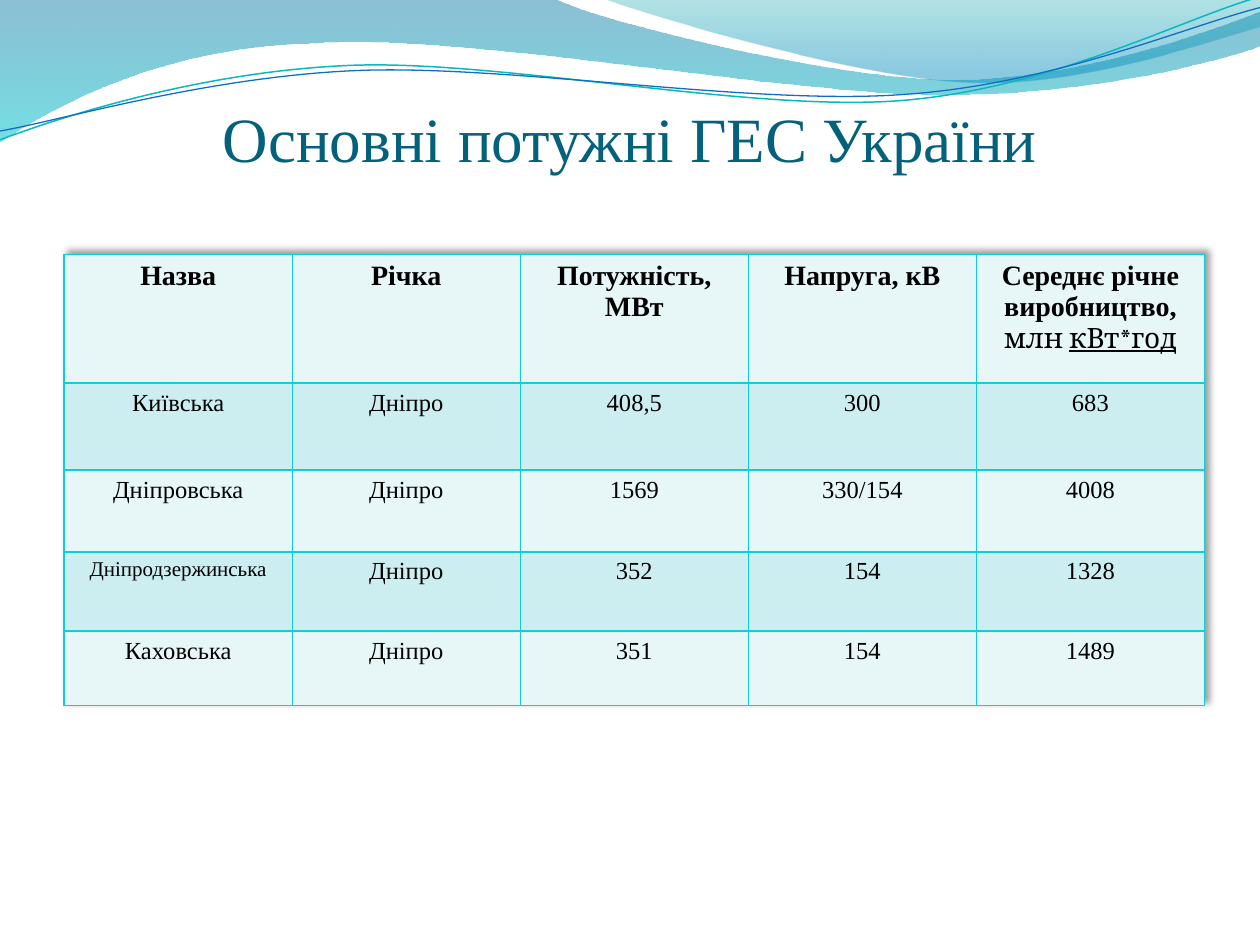
import math
from dataclasses import dataclass

from lxml import etree
from pptx import Presentation
from pptx import util as u
from pptx.dml import color
from pptx.enum import text
from pptx.oxml import ns


@dataclass(frozen=True)
class Theme:
    font: str = "Times New Roman"
    unit_font: str = "Cambria"
    title: str = "04617B"
    ink: str = "000000"
    border: str = "0BD0D9"
    bands: tuple = ("E7F7F8", "CCEEF1")
    left_wave: tuple = ((0, "0074A1", 45), (1, "00C6CF", 55))
    right_wave: tuple = ((0, "00A1A9", 30), (0.8, "008BBF", 45))
    teal_line: str = "0AB8BF"
    blue_line: str = "0F6FC6"
    title_size: int = 36
    header_size: int = 16
    body_size: int = 14
    small_size: int = 12


T = Theme()
LINE_TILT = 357.3

LEFT_WAVE = [
    (0, 0), (4.4, -0.01),
    (4.76, 0.17, 6.64, 0.63, 7.58, 0.63), (8.53, 0.63, 9.58, 0.26, 10, 0.09),
    (10.01, 0.36),
    (9.83, 0.44, 8.7, 0.76, 7.46, 0.75), (6.22, 0.75, 3.82, 0.28, 2.57, 0.34),
    (1.29, 0.36, 0.46, 0.83, -0.01, 1.13), (0, 0),
]
RIGHT_WAVE = [
    (4.79, -0.01),
    (5.09, 0.11, 6.82, 0.62, 7.69, 0.65), (8.56, 0.69, 9.61, 0.32, 10, 0.21),
    (10, 0), (4.79, -0.01),
]
TEAL_LINE = [
    (0, 1.11),
    (0.48, 0.93, 1.58, 0.57, 2.77, 0.52), (3.95, 0.47, 5.93, 0.89, 7.13, 0.8),
    (8.33, 0.71, 9.38, 0.15, 9.98, -0.02),
]
BLUE_LINE = [
    (0, 1.04),
    (0.47, 0.96, 1.64, 0.61, 2.83, 0.56), (4.03, 0.51, 5.97, 0.84, 7.17, 0.75),
    (8.36, 0.67, 9.41, 0.21, 10, 0.06),
]

HEADERS = ["Назва", "Річка", "Потужність, МВт", "Напруга, кВ", "Середнє річне виробництво,"]
PLANTS = [
    ["Київська", "Дніпро", "408,5", "300", "683"],
    ["Дніпровська", "Дніпро", "1569", "330/154", "4008"],
    ["Дніпродзержинська", "Дніпро", "352", "154", "1328"],
    ["Каховська", "Дніпро", "351", "154", "1489"],
]
ROW_HEIGHTS = [1.02, 0.69, 0.65, 0.63, 0.59]
COLUMN_WIDTH = 1.81


def rgb(value):
    return color.RGBColor.from_string(value)


def add_xml(parent, tag, **attrs):
    return etree.SubElement(parent, ns.qn(tag), attrs)


def local_point(x, y, box, tilt):
    left, top, width, height = box
    dx, dy = x - left - width / 2, y - top - height / 2
    angle = math.radians(-tilt)
    return (u.Inches(width / 2 + dx * math.cos(angle) - dy * math.sin(angle)),
            u.Inches(height / 2 + dx * math.sin(angle) + dy * math.cos(angle)))


def add_curve(shapes, segments, box, close, tilt=0):
    curve = [[local_point(x, y, box, tilt) for x, y in zip(seg[::2], seg[1::2])]
             for seg in segments]
    builder = shapes.build_freeform(*curve[0][-1], scale=1.0)
    builder.add_line_segments([points[-1] for points in curve[1:]], close=close)
    sp = builder.convert_to_shape()
    sp.left, sp.top, sp.width, sp.height = map(u.Inches, box)
    sp.rotation = tilt
    sp.shadow.inherit = False
    outline = next(sp.element.iter(ns.qn("a:path")))
    outline.set("w", str(sp.width))
    outline.set("h", str(sp.height))
    for node, points in zip(list(outline), curve):
        for point in list(node):
            node.remove(point)
        if len(points) == 3:
            node.tag = ns.qn("a:cubicBezTo")
        for x, y in points:
            add_xml(node, "a:pt", x=str(x), y=str(y))
    return sp


def add_wave(shapes, segments, box, stops):
    sp = add_curve(shapes, segments, box, close=True)
    sp.line.fill.background()
    sp.fill.gradient()
    sp.fill.gradient_angle = 270
    for stop, (position, value, _) in zip(sp.fill.gradient_stops, stops):
        stop.position = position
        stop.color.rgb = rgb(value)
    for node, (_, _, opacity) in zip(sp.element.iter(ns.qn("a:srgbClr")), stops):
        add_xml(node, "a:alpha", val=str(opacity * 1000))


def add_wave_line(shapes, segments, box, value, width):
    sp = add_curve(shapes, segments, box, close=False, tilt=LINE_TILT)
    sp.fill.background()
    sp.line.color.rgb = rgb(value)
    sp.line.width = u.Pt(width)


def add_run(p, words, size, font=T.font, value=T.ink, bold=False, underline=False):
    p.alignment = text.PP_ALIGN.CENTER
    r = p.add_run()
    r.text = words
    r.font.name = font
    r.font.size = u.Pt(size)
    r.font.bold = bold
    r.font.underline = underline
    r.font.color.rgb = rgb(value)


def set_title(s, words):
    sp = s.shapes.title
    sp.left, sp.top, sp.width, sp.height = map(u.Inches, (0.5, 0.77, 9, 0.62))
    sp.element.getparent().append(sp.element)
    tf = sp.text_frame
    tf.word_wrap = True
    tf.auto_size = text.MSO_AUTO_SIZE.NONE
    tf.vertical_anchor = text.MSO_ANCHOR.BOTTOM
    tf.margin_left = tf.margin_right = tf.margin_bottom = 0
    tf.margin_top = u.Inches(0.05)
    add_run(tf.paragraphs[0], words, T.title_size, value=T.title)


def style_cell(cell, fill):
    tc_pr = cell._tc.get_or_add_tcPr()
    for side in ("a:lnL", "a:lnR", "a:lnT", "a:lnB"):
        line = add_xml(tc_pr, side, w=str(u.Pt(1)))
        add_xml(add_xml(line, "a:solidFill"), "a:srgbClr", val=T.border)
    cell.fill.solid()
    cell.fill.fore_color.rgb = rgb(fill)


def add_table_shadow(table):
    effects = etree.Element(ns.qn("a:effectLst"))
    shadow = add_xml(effects, "a:outerShdw", blurRad=str(u.Pt(4)), dist=str(u.Pt(3)),
                     dir="18900000", algn="bl", rotWithShape="0")
    add_xml(add_xml(shadow, "a:srgbClr", val=T.ink), "a:alpha", val="40000")
    table._tbl.tblPr.insert(0, effects)


def add_plant_table(s):
    rows = [HEADERS] + PLANTS
    frame = s.shapes.add_table(len(rows), len(HEADERS), u.Inches(0.51), u.Inches(2.02),
                               u.Inches(COLUMN_WIDTH * len(HEADERS)),
                               u.Inches(sum(ROW_HEIGHTS)))
    table = frame.table
    table.first_row = table.horz_banding = False
    add_table_shadow(table)
    for column in table.columns:
        column.width = u.Inches(COLUMN_WIDTH)
    for i, values in enumerate(rows):
        table.rows[i].height = u.Inches(ROW_HEIGHTS[i])
        for j, words in enumerate(values):
            cell = table.cell(i, j)
            style_cell(cell, T.bands[i % 2])
            size = T.header_size if i == 0 else T.body_size
            if words == "Дніпродзержинська":
                size = T.small_size
            add_run(cell.text_frame.paragraphs[0], words, size, bold=i == 0)
    p = table.cell(0, len(HEADERS) - 1).text_frame.add_paragraph()
    add_run(p, "млн ", T.header_size, font=T.unit_font)
    add_run(p, "кВт*год", T.header_size, font=T.unit_font, underline=True)


def main():
    prs = Presentation()
    prs.slide_width, prs.slide_height = u.Inches(10), u.Inches(7.5)
    s = prs.slides.add_slide(prs.slide_layouts[5])
    add_wave(s.shapes, LEFT_WAVE, (-0.01, -0.01, 10.02, 1.14), T.left_wave)
    add_wave(s.shapes, RIGHT_WAVE, (4.79, -0.01, 5.21, 0.7), T.right_wave)
    lines = s.shapes.add_group_shape().shapes
    add_wave_line(lines, TEAL_LINE, (-0.02, 0.22, 10.02, 0.71), T.teal_line, 0.85)
    add_wave_line(lines, BLUE_LINE, (-0.02, 0.3, 10.03, 0.58), T.blue_line, 0.75)
    set_title(s, "Основні потужні ГЕС України")
    add_plant_table(s)
    prs.save("out.pptx")


if __name__ == "__main__":
    main()
